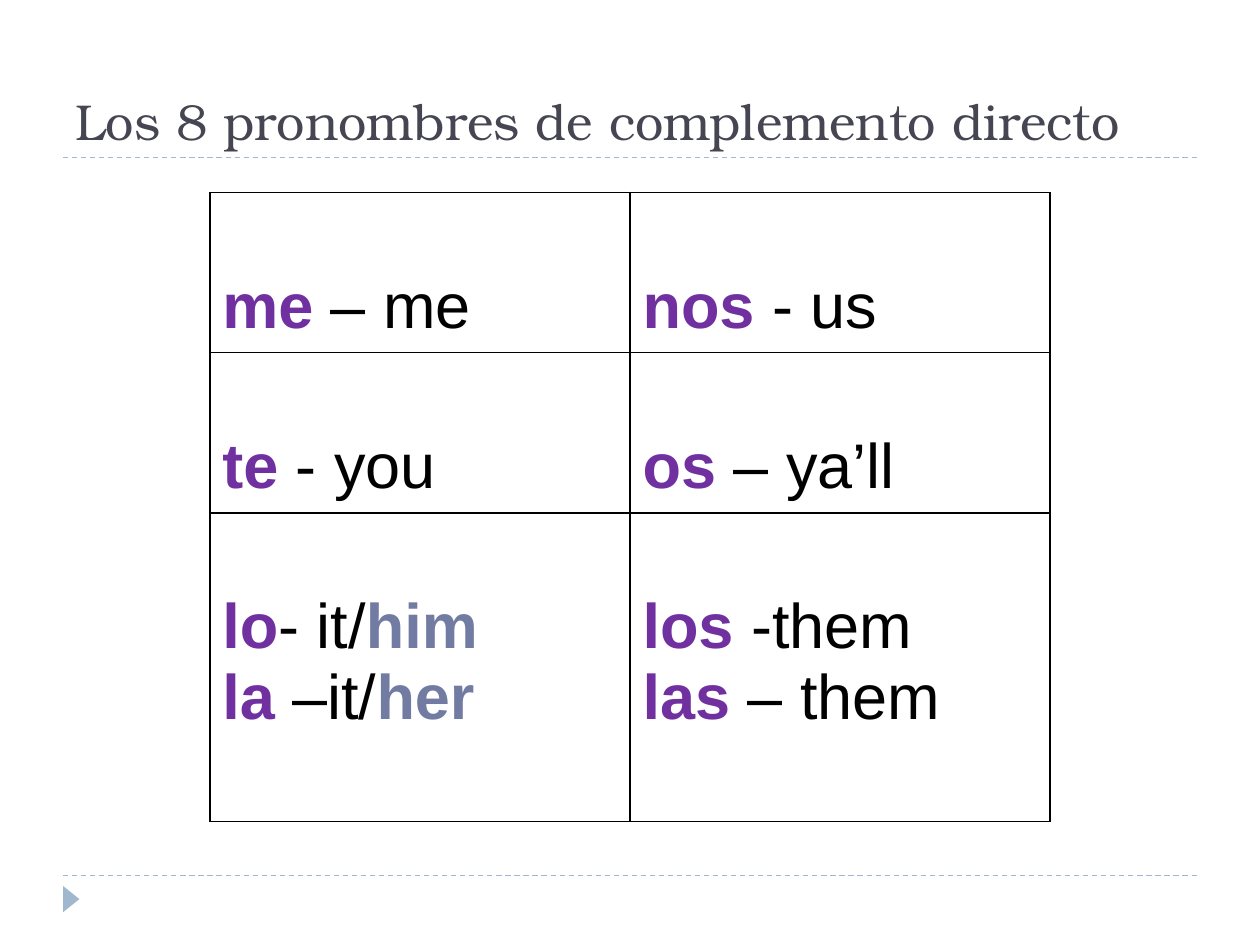
from lxml import etree
from pptx import Presentation
from pptx.dml.color import RGBColor
from pptx.enum import dml, shapes, text
from pptx.oxml import parse_xml
from pptx.oxml.ns import nsdecls, qn
from pptx.util import Cm, Pt

PURPLE = RGBColor(0x70, 0x30, 0xA0)
SLATE = RGBColor(0x72, 0x7C, 0xA3)
BLACK = RGBColor(0, 0, 0)
INK = RGBColor(0x46, 0x46, 0x53)
PALE_BLUE = RGBColor(0x9F, 0xB8, 0xCD)

# Each cell holds lines; each line holds (wording, colour), colours being bold
PRONOUNS = [
    [[[("me", PURPLE), (" – me", BLACK)]],
     [[("nos ", PURPLE), ("- us", BLACK)]]],
    [[[("te", PURPLE), (" - you", BLACK)]],
     [[("os", PURPLE), (" – ya’ll", BLACK)]]],
    [[[("lo", PURPLE), ("- it/", BLACK), ("him", SLATE)],
      [("la", PURPLE), (" –it/", BLACK), ("her", SLATE)]],
     [[("los", PURPLE), (" -them", BLACK)],
      [("las", PURPLE), (" – them", BLACK)]]],
]
ROW_HEIGHTS = [Cm(3.23), Cm(3.23), Cm(6.22)]
COLUMN_WIDTH = Cm(8.47)


def add_dashed_rule(page, top):
    rule = page.shapes.add_connector(
        shapes.MSO_CONNECTOR.STRAIGHT, Cm(1.27), top, Cm(24.13), top)
    rule.line.color.rgb = PALE_BLUE
    rule.line.width = Pt(0.75)
    rule.line.dash_style = dml.MSO_LINE.DASH
    etree.SubElement(rule._element.spPr, qn("a:effectLst"))


def add_page_marker(page):
    marker = page.shapes.add_shape(
        shapes.MSO_SHAPE.ISOSCELES_TRIANGLE,
        Cm(1.17), Cm(17.96), Cm(0.53), Cm(0.33))
    marker.rotation = 90
    marker.shadow.inherit = False
    marker.fill.solid()
    marker.fill.fore_color.rgb = PALE_BLUE
    marker.line.fill.background()


def format_title(page, wording):
    title = page.shapes.title
    title.left, title.top = Cm(1.27), Cm(0.43)
    title.width, title.height = Cm(22.86), Cm(2.74)
    frame = title.text_frame
    frame.text = wording
    frame.auto_size = text.MSO_AUTO_SIZE.NONE
    frame.vertical_anchor = text.MSO_ANCHOR.BOTTOM
    para = frame.paragraphs[0]
    para.alignment = text.PP_ALIGN.LEFT
    para.font.name = "TeX Gyre Bonum"
    para.font.size = Pt(28.8)
    para.font.color.rgb = INK


def add_borders(cell):
    properties = cell._tc.get_or_add_tcPr()
    for position, side in enumerate(("lnL", "lnR", "lnT", "lnB")):
        properties.insert(position, parse_xml(
            f'<a:{side} {nsdecls("a")} w="{Pt(1)}"><a:solidFill>'
            f'<a:srgbClr val="{BLACK}"/></a:solidFill></a:{side}>'))


def fill_cell(cell, lines):
    cell.fill.background()
    add_borders(cell)
    cell.margin_top = Cm(1.59)
    frame = cell.text_frame
    for number, line in enumerate(lines):
        para = frame.add_paragraph() if number else frame.paragraphs[0]
        para.font.name = "Arial"
        para.font.size = Pt(36)
        for wording, colour in line:
            span = para.add_run()
            span.text = wording
            span.font.name = "Arial"
            span.font.size = Pt(36)
            span.font.bold = colour != BLACK
            span.font.color.rgb = colour


def add_pronoun_table(page):
    table = page.shapes.add_table(
        len(PRONOUNS), 2, Cm(4.23), Cm(3.88),
        2 * COLUMN_WIDTH, sum(ROW_HEIGHTS)).table
    table.first_row = table.horz_banding = False
    for column in table.columns:
        column.width = COLUMN_WIDTH
    for row, height, cells in zip(table.rows, ROW_HEIGHTS, PRONOUNS):
        row.height = height
        for cell, lines in zip(row.cells, cells):
            fill_cell(cell, lines)


def main():
    deck = Presentation()
    deck.slide_width, deck.slide_height = Cm(25.4), Cm(19.05)
    page = deck.slides.add_slide(deck.slide_layouts.get_by_name("Title Only"))

    # Frame of the page
    for top in (Cm(17.65), Cm(3.18)):
        add_dashed_rule(page, top)
    add_page_marker(page)

    # Content
    format_title(page, "Los 8 pronombres de complemento directo")
    add_pronoun_table(page)
    deck.save("out.pptx")


if __name__ == "__main__":
    main()
